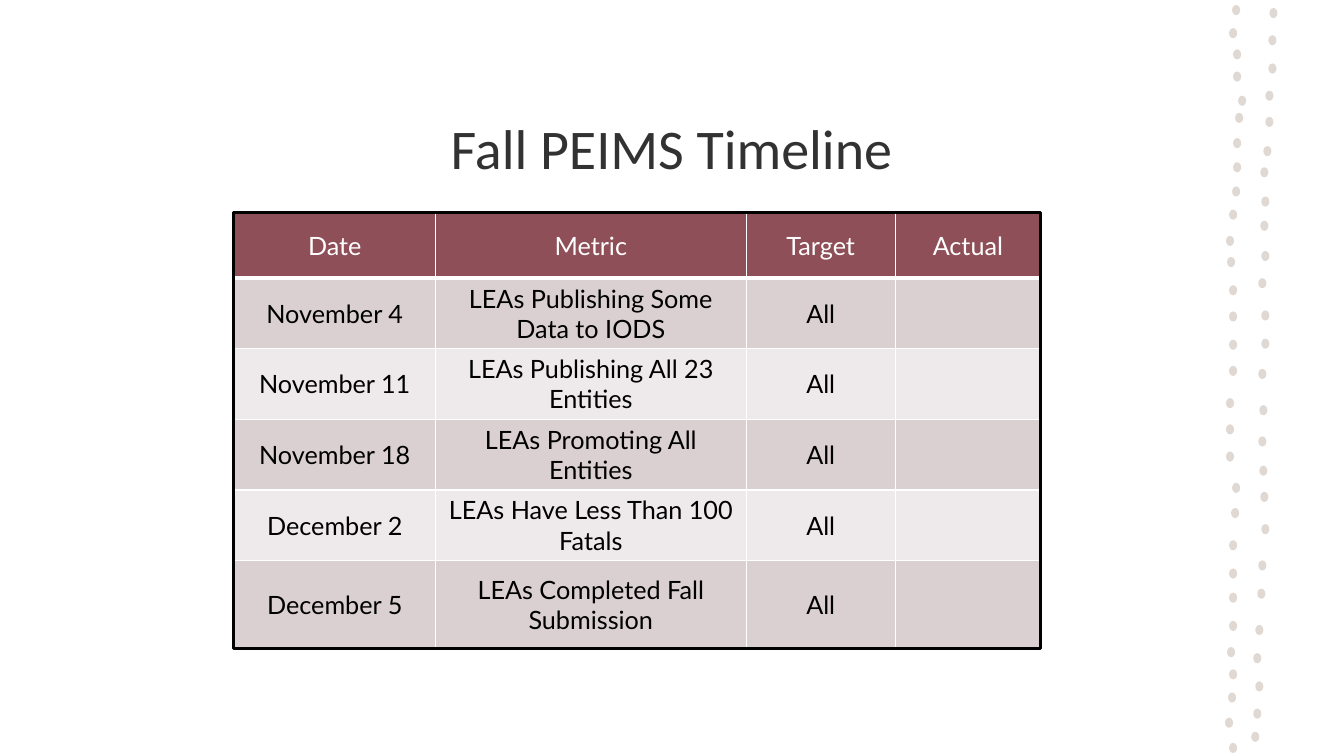
"""Build the Fall PEIMS Timeline slide."""
from lxml import etree
from pptx import Presentation
from pptx.dml.color import RGBColor
from pptx.enum.shapes import MSO_SHAPE
from pptx.enum.text import MSO_ANCHOR, PP_ALIGN
from pptx.oxml.ns import qn
from pptx.util import Inches, Pt

OVAL, RECTANGLE = MSO_SHAPE.OVAL, MSO_SHAPE.RECTANGLE
MIDDLE, BOTTOM = MSO_ANCHOR.MIDDLE, MSO_ANCHOR.BOTTOM
CENTER = PP_ALIGN.CENTER
TITLE_ONLY = 5

COLORS = {
    "title": "323232",
    "header": "8F4F58",
    "odd_row": "DBD0D1",
    "even_row": "EEE9EA",
    "white": "FFFFFF",
    "black": "000000",
    "dot": "E0D8D2",
}

TIMELINE = [
    ("Date", "Metric", "Target", "Actual"),
    ("November 4", "LEAs Publishing Some Data to IODS", "All", ""),
    ("November 11", "LEAs Publishing All 23 Entities", "All", ""),
    ("November 18", "LEAs Promoting All Entities", "All", ""),
    ("December 2", "LEAs Have Less Than 100 Fatals", "All", ""),
    ("December 5", "LEAs Completed Fall Submission", "All", ""),
]
COLUMN_WIDTHS = [2, 3.08, 1.48, 1.44]
ROW_HEIGHTS = [0.65, 0.7, 0.7, 0.7, 0.7, 0.87]
TABLE_FRAME = [Inches(n) for n in (2.32, 2.11, 8, 4.32)]

DOT_WIDTH, DOT_HEIGHT = 0.08, 0.1
LEFT_DOTS = [
    (12.26, 0.1), (12.23, 0.33), (12.27, 0.54), (12.27, 0.76), (12.32, 1),
    (12.29, 1.17), (12.27, 1.42), (12.27, 1.66), (12.26, 1.9), (12.23, 2.13),
    (12.2, 2.39), (12.21, 2.6), (12.23, 2.88), (12.23, 3.14), (12.23, 3.42),
    (12.23, 3.68), (12.2, 4), (12.2, 4.26), (12.2, 4.53), (12.26, 4.84),
    (12.25, 5.09), (12.23, 5.41), (12.23, 5.69), (12.23, 5.93), (12.23, 6.21),
    (12.21, 6.47), (12.23, 6.69), (12.22, 6.92), (12.19, 7.17), (12.23, 7.42),
]
RIGHT_DOTS = [
    (12.63, 0.13), (12.62, 0.4), (12.62, 0.68), (12.59, 0.95), (12.59, 1.21),
    (12.57, 1.5), (12.54, 1.71), (12.55, 2), (12.54, 2.24), (12.55, 2.54),
    (12.52, 2.81), (12.55, 3.13), (12.55, 3.41), (12.52, 3.71), (12.53, 4.07),
    (12.52, 4.38), (12.53, 4.67), (12.54, 4.93), (12.55, 5.25), (12.52, 5.61),
    (12.51, 5.89), (12.49, 6.25), (12.47, 6.53), (12.49, 6.81), (12.47, 7.08),
    (12.45, 7.31),
]


def color(name):
    """Return the named colour."""
    return RGBColor.from_string(COLORS[name])


def style_text(frame, font_name, size, color_name):
    """Centre the text and set its font."""
    for paragraph in frame.paragraphs:
        paragraph.alignment = CENTER
        paragraph.font.name = font_name
        paragraph.font.size = Pt(size)
        paragraph.font.color.rgb = color(color_name)


def add_title(slide, text):
    """Place and format the slide title."""
    title = slide.shapes.title
    title.left, title.top = Inches(0.91), Inches(0.23)
    title.width, title.height = Inches(11.5), Inches(1.61)
    title.text_frame.text = text
    title.text_frame.vertical_anchor = BOTTOM
    style_text(title.text_frame, "Calibri", 40, "title")


def add_dots(slide, centers):
    """Draw one wavy column of small dots as a group."""
    dots = slide.shapes.add_group_shape().shapes
    for x, y in centers:
        dot = dots.add_shape(
            OVAL, Inches(x - DOT_WIDTH / 2), Inches(y - DOT_HEIGHT / 2),
            Inches(DOT_WIDTH), Inches(DOT_HEIGHT))
        dot.shadow.inherit = False
        dot.fill.solid()
        dot.fill.fore_color.rgb = color("dot")
        dot.line.fill.background()


def add_borders(cell, top, bottom):
    """Give a cell white borders with the top and bottom widths in points."""
    properties = cell._tc.get_or_add_tcPr()
    for side, width in (("L", 1), ("R", 1), ("T", top), ("B", bottom)):
        border = etree.SubElement(properties, qn(f"a:ln{side}"), w=str(Pt(width)))
        fill = etree.SubElement(border, qn("a:solidFill"))
        etree.SubElement(fill, qn("a:srgbClr"), val=COLORS["white"])


def add_timeline(slide):
    """Add the timeline table."""
    table = slide.shapes.add_table(
        len(ROW_HEIGHTS), len(COLUMN_WIDTHS), *TABLE_FRAME).table
    for column, width in zip(table.columns, COLUMN_WIDTHS):
        column.width = Inches(width)
    for row_index, entries in enumerate(TIMELINE):
        table.rows[row_index].height = Inches(ROW_HEIGHTS[row_index])
        is_header = row_index == 0
        band = "header" if is_header else "odd_row" if row_index % 2 else "even_row"
        for column_index, entry in enumerate(entries):
            cell = table.cell(row_index, column_index)
            cell.text = entry
            cell.vertical_anchor = MIDDLE
            add_borders(cell, 3 if row_index == 1 else 1, 3 if is_header else 1)
            cell.fill.solid()
            cell.fill.fore_color.rgb = color(band)
            style_text(cell.text_frame, "Lato", 18, "white" if is_header else "black")
            cell.text_frame.paragraphs[0].font.bold = False


def add_outline(slide):
    """Frame the table with a black line."""
    outline = slide.shapes.add_shape(RECTANGLE, *TABLE_FRAME)
    outline.shadow.inherit = False
    outline.fill.background()
    outline.line.color.rgb = color("black")
    outline.line.width = Pt(2.25)


def main():
    """Build and save the slide."""
    deck = Presentation()
    deck.slide_width, deck.slide_height = Inches(13.33), Inches(7.5)
    slide = deck.slides.add_slide(deck.slide_layouts[TITLE_ONLY])
    add_dots(slide, LEFT_DOTS)
    add_dots(slide, RIGHT_DOTS)
    add_title(slide, "Fall PEIMS Timeline")
    add_timeline(slide)
    add_outline(slide)
    deck.save("out.pptx")


if __name__ == "__main__":
    main()
